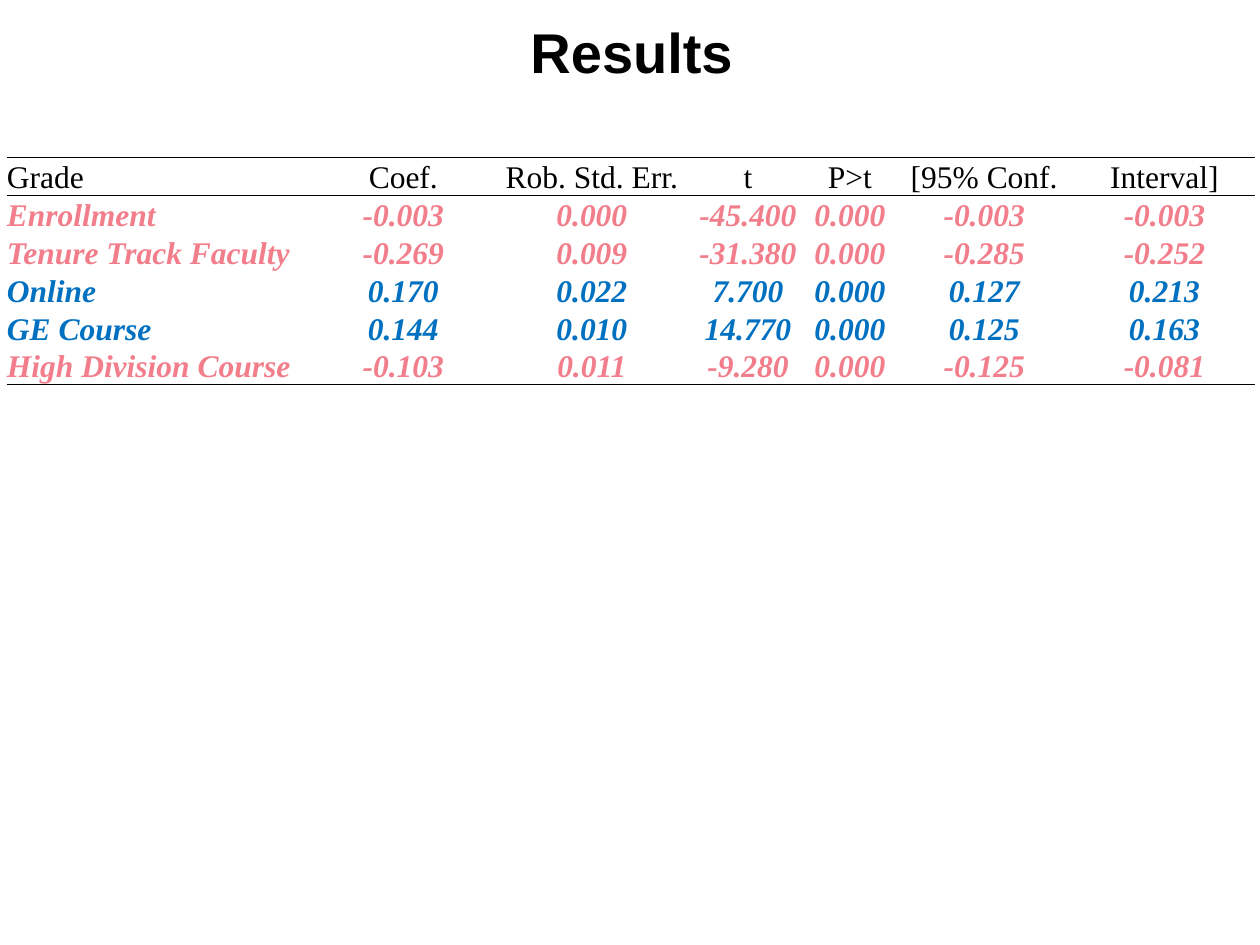
from dataclasses import dataclass

from lxml import etree
from pptx import Presentation
from pptx.dml.color import RGBColor
from pptx.enum import text
from pptx.oxml import ns
from pptx.util import Pt


@dataclass(frozen=True)
class Theme:
    """Colours, fonts and type sizes of the slide."""
    ink: str = "000000"
    negative: str = "F27E8C"
    positive: str = "0070C0"
    title_font: str = "Arial"
    table_font: str = "Times New Roman"
    title_size: float = 32
    table_size: float = 18
    rule: float = 0.5


THEME = Theme()
HEADER = ["Grade", "Coef.", "Rob. Std. Err.", "t", "P>t", "[95% Conf.", "Interval]"]
RESULTS = [
    ["Enrollment", "-0.003", "0.000", "-45.400", "0.000", "-0.003", "-0.003"],
    ["Tenure Track Faculty", "-0.269", "0.009", "-31.380", "0.000", "-0.285", "-0.252"],
    ["Online", "0.170", "0.022", "7.700", "0.000", "0.127", "0.213"],
    ["GE Course", "0.144", "0.010", "14.770", "0.000", "0.125", "0.163"],
    ["High Division Course", "-0.103", "0.011", "-9.280", "0.000", "-0.125", "-0.081"],
]
COLUMN_WIDTHS = [175, 103, 112.5, 66, 50.5, 103, 103]


def style_paragraph(p, name, size, color, bold, italic=False):
    """Set the font of a whole paragraph."""
    p.font.name, p.font.size = name, Pt(size)
    p.font.bold, p.font.italic = bold, italic
    p.font.color.rgb = RGBColor.from_string(color)


def set_borders(cell, ruled):
    """Draw the ruled sides of a cell and clear the others."""
    tc_pr = cell._tc.get_or_add_tcPr()
    for i, side in enumerate("LRTB"):
        ln = etree.Element(ns.qn(f"a:ln{side}"), w=str(Pt(THEME.rule)))
        if side in ruled:
            fill = etree.SubElement(ln, ns.qn("a:solidFill"))
            etree.SubElement(fill, ns.qn("a:srgbClr"), val=THEME.ink)
        else:
            etree.SubElement(ln, ns.qn("a:noFill"))
        tc_pr.insert(i, ln)


def add_title(s, left, top, width, height):
    """Place the slide title centred in its box."""
    tf = s.shapes.add_textbox(Pt(left), Pt(top), Pt(width), Pt(height)).text_frame
    tf.word_wrap = True
    tf.vertical_anchor = text.MSO_ANCHOR.MIDDLE
    p = tf.paragraphs[0]
    p.text = "Results"
    p.alignment = text.PP_ALIGN.CENTER
    style_paragraph(p, THEME.title_font, THEME.title_size, THEME.ink, True)


def fill_cell(cell, value, color, is_label, is_header, ruled):
    """Write one table cell with its style and rules."""
    cell.margin_left = cell.margin_right = cell.margin_top = cell.margin_bottom = 0
    cell.vertical_anchor = text.MSO_ANCHOR.BOTTOM
    cell.fill.background()
    p = cell.text_frame.paragraphs[0]
    p.text = value
    p.alignment = text.PP_ALIGN.LEFT if is_label else text.PP_ALIGN.CENTER
    style_paragraph(p, THEME.table_font, THEME.table_size, color,
                    not is_header, not is_header)
    set_borders(cell, ruled)


def add_results_table(s, left, top, row_height):
    """Place the regression table, coloured by the sign of the coefficient."""
    rows = [HEADER] + RESULTS
    table = s.shapes.add_table(
        len(rows), len(HEADER), Pt(left), Pt(top),
        Pt(sum(COLUMN_WIDTHS)), Pt(row_height * len(rows))).table
    table.first_row = table.horz_banding = False
    for column, width in zip(table.columns, COLUMN_WIDTHS):
        column.width = Pt(width)
    rules = {0: "TB", 1: "T", len(rows) - 1: "B"}
    for i, row in enumerate(rows):
        table.rows[i].height = Pt(row_height)
        if i == 0:
            color = THEME.ink
        else:
            color = THEME.negative if float(row[1]) < 0 else THEME.positive
        for j, value in enumerate(row):
            fill_cell(table.cell(i, j), value, color, j == 0, i == 0, rules.get(i, ""))


def main():
    """Build and save the slide."""
    prs = Presentation()
    prs.slide_width, prs.slide_height = Pt(720), Pt(540)
    s = prs.slides.add_slide(prs.slide_layouts[6])
    add_title(s, 4, 4, 714, 50)
    add_results_table(s, 4, 90, 21)
    prs.save("out.pptx")


if __name__ == "__main__":
    main()
